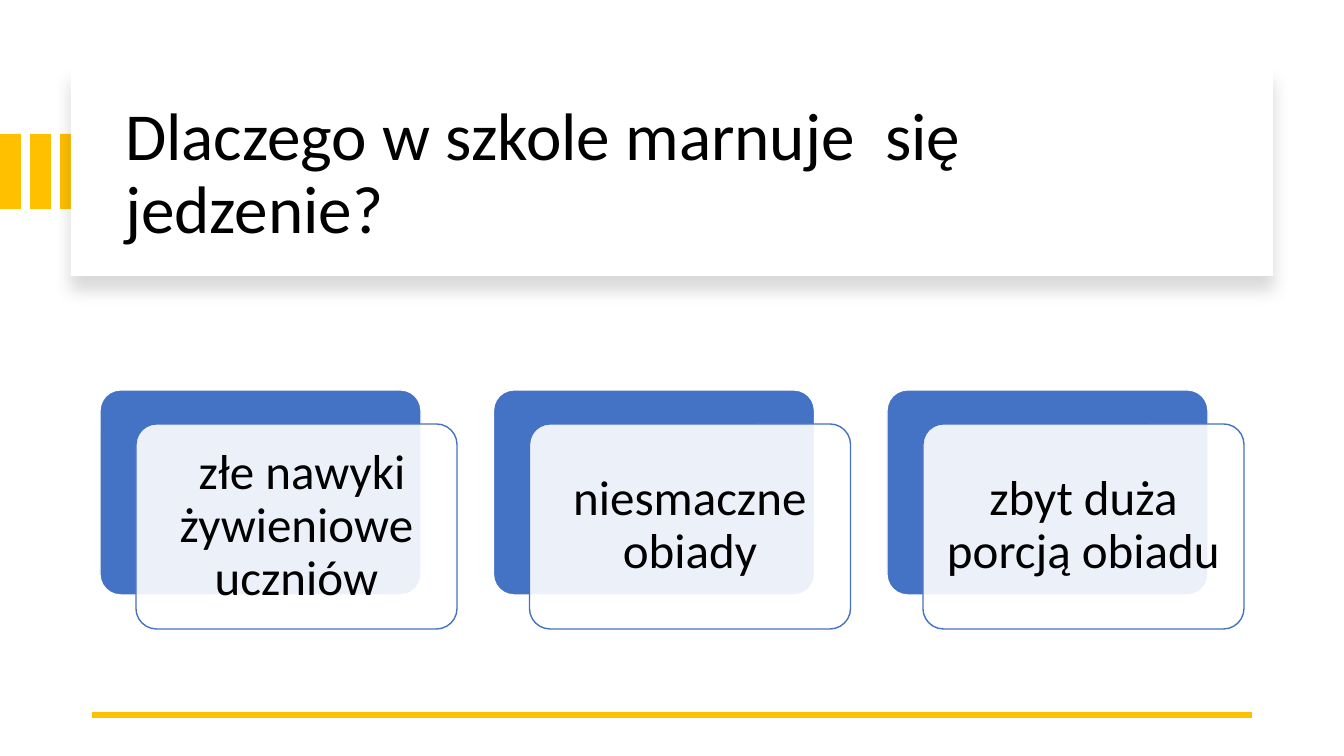
from lxml import etree
from pptx import Presentation
from pptx import util as u
from pptx.dml.color import RGBColor
from pptx.enum import shapes, text
from pptx.oxml import ns

SCALE = 12192000 / 1344  # EMU in one px
COLORS = {"gold": "FFC000", "blue": "4472C4", "white": "FFFFFF", "black": "000000"}
FONT = "Calibri"
TITLE = "Dlaczego w szkole marnuje  się jedzenie?"
CAUSES = [" złe nawyki żywieniowe uczniów", "niesmaczne obiady", "zbyt duża porcją obiadu"]
RECT = shapes.MSO_SHAPE.RECTANGLE
ROUND = shapes.MSO_SHAPE.ROUNDED_RECTANGLE


def px(n):
    return u.Emu(round(n * SCALE))


def rgb(name):
    return RGBColor.from_string(COLORS[name])


def sub(parent, tag, **attrs):
    return etree.SubElement(parent, ns.qn(tag), attrs)


def block(slide, kind, box, fill, line=None):
    shape = slide.shapes.add_shape(kind, *map(px, box))
    shape.shadow.inherit = False
    shape.fill.solid()
    shape.fill.fore_color.rgb = rgb(fill)
    if line:
        shape.line.color.rgb = rgb(line)
        shape.line.width = u.Pt(1)
    else:
        shape.line.fill.background()
    if kind == ROUND:
        shape.adjustments[0] = 0.1
    return shape


def write(shape, words, size, align, pad):
    frame = shape.text_frame
    frame.word_wrap = True
    frame.vertical_anchor = text.MSO_ANCHOR.MIDDLE
    frame.margin_left = frame.margin_right = px(pad[0])
    frame.margin_top = frame.margin_bottom = px(pad[1])
    para = frame.paragraphs[0]
    para.alignment = align
    para.line_spacing = 0.9
    run = para.add_run()
    run.text = words
    run.font.name = FONT
    run.font.size = u.Pt(size)
    run.font.color.rgb = rgb("black")


def stripes(slide, box):
    left, top, width, height = box
    for i in range(3):
        block(slide, RECT, (left + 30 * i, top, width, height), "gold")


def header(slide, box):
    left, top, width, height = box
    panel = block(slide, RECT, box, "white")
    # Soft shadow below the panel
    effects = panel._element.spPr.find(ns.qn("a:effectLst"))
    shade = sub(effects, "a:outerShdw", blurRad=str(u.Pt(11)), dist=str(u.Pt(10)),
                dir="5400000", algn="t", rotWithShape="0")
    color = sub(shade, "a:srgbClr", val=COLORS["black"])
    sub(color, "a:alpha", val="15000")
    # Title
    area = (left + 44, top + 22, width - 81, height - 38)
    title = slide.shapes.add_textbox(*map(px, area))
    write(title, TITLE, 48, text.PP_ALIGN.LEFT, (10, 5))


def card(slide, box, words):
    left, top, width, height = box
    block(slide, ROUND, box, "blue", "white")
    front = block(slide, ROUND, (left + 36, top + 34, width, height), "white", "blue")
    # Let the back card show through slightly
    color = front._element.spPr.find(ns.qn("a:solidFill"))[0]
    sub(color, "a:alpha", val="90000")
    write(front, words, 35, text.PP_ALIGN.CENTER, (15, 15))


def cards(slide, box):
    left, top, width, height = box
    step = (width - 357) / (len(CAUSES) - 1)
    for i, words in enumerate(CAUSES):
        card(slide, (left + step * i, top, 321, height - 34), words)


def rule(slide, left, right, y):
    line = slide.shapes.add_connector(shapes.MSO_CONNECTOR.STRAIGHT,
                                      px(right), px(y), px(left), px(y))
    line.line.color.rgb = rgb("gold")
    line.line.width = u.Pt(4.5)
    sub(line._element.spPr, "a:effectLst")


def main():
    deck = Presentation()
    deck.slide_width, deck.slide_height = px(1344), px(756)
    slide = deck.slides.add_slide(deck.slide_layouts[6])
    stripes(slide, (0, 134, 21, 75))
    header(slide, (71, 68, 1202, 208))
    rule(slide, 92, 1252, 715)
    cards(slide, (100, 390, 1144, 239))
    deck.save("out.pptx")


if __name__ == "__main__":
    main()
